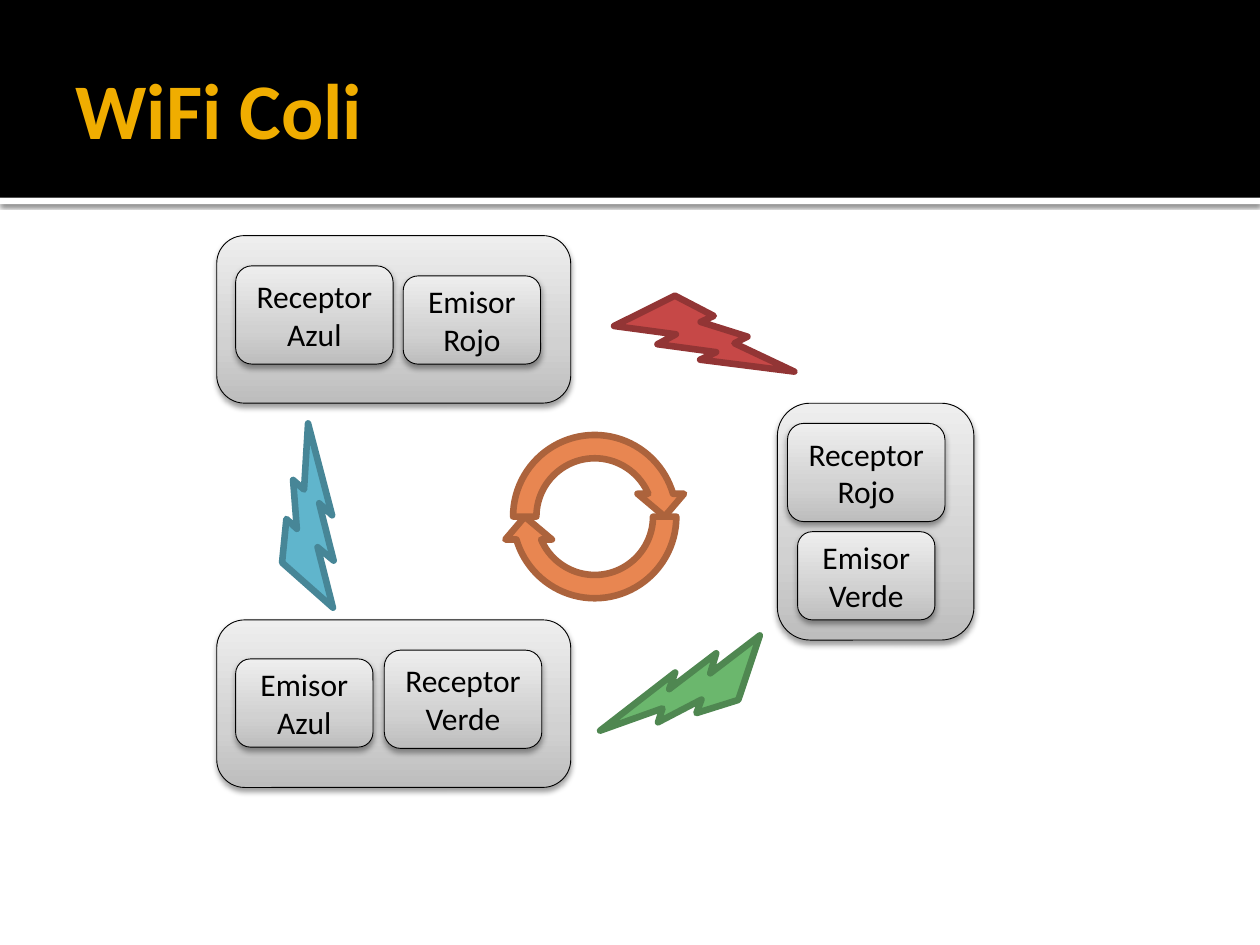
from lxml import etree
from pptx import Presentation
from pptx.dml.color import RGBColor
from pptx.enum import shapes, text
from pptx.oxml.ns import nsdecls
from pptx.util import Inches, Pt

PREFERRED = shapes.MSO_SHAPE
GRADIENT = [(0, "BDBDBD"), (35, "D1D1D1"), (100, "EEEEEE")]


def add_block(kind, box, fill, line=None, width=0.5, rotation=0):
    block = slide.shapes.add_shape(kind, *map(Inches, box))
    block.shadow.inherit = False
    block.rotation = rotation
    block.fill.solid()
    block.fill.fore_color.rgb = RGBColor.from_string(fill)
    if line:
        block.line.color.rgb = RGBColor.from_string(line)
        block.line.width = Pt(width)
    else:
        block.line.fill.background()
    return block


def add_shadow(block, alpha, blur, distance):
    effects = block.element.spPr.find("{*}effectLst")
    effects.append(etree.fromstring(
        f'<a:outerShdw {nsdecls("a")} blurRad="{Pt(blur)}" dist="{Pt(distance)}" '
        f'dir="5400000" rotWithShape="0"><a:srgbClr val="000000">'
        f'<a:alpha val="{alpha * 1000}"/></a:srgbClr></a:outerShdw>'))


prs = Presentation()
prs.slide_width, prs.slide_height = Inches(10), Inches(7.5)
slide = prs.slides.add_slide(prs.slide_layouts[5])

# Header band and the strip below it
strip = add_block(PREFERRED.RECTANGLE, (0, 1.57, 10, 0.05), "FFFFFF")
add_shadow(strip, 60, 2.5, 0.8)
add_block(PREFERRED.RECTANGLE, (0, 0, 10, 1.57), "000000")

# Title, brought in front of the band
title = slide.shapes.title
title.element.getparent().append(title.element)
title.left, title.top, title.width, title.height = map(Inches, (0.5, 0.17, 9, 1.37))
title.text = "WiFi Coli"
frame_format = {
    "vertical_anchor": text.MSO_ANCHOR.MIDDLE, "auto_size": text.MSO_AUTO_SIZE.NONE,
    "margin_left": Inches(0.1), "margin_right": Inches(0.05),
    "margin_top": Inches(0.05), "margin_bottom": Inches(0.05),
}
for attribute, value in frame_format.items():
    setattr(title.text_frame, attribute, value)
heading = title.text_frame.paragraphs[0]
heading.alignment = text.PP_ALIGN.LEFT
for attribute, value in {"name": "Calibri", "size": Pt(45), "bold": True}.items():
    setattr(heading.font, attribute, value)
heading.font.color.rgb = RGBColor.from_string("F0AD00")

# Cells, then the receptors and emitters inside them
RECEPTOR, EMITTER = (1.25, 0.78), (1.09, 0.7)
cells_and_parts = [
    ("", 6.17, 3.2, (1.56, 1.88)),
    ("", 1.72, 4.92, (2.81, 1.33)),
    ("", 1.72, 1.87, (2.81, 1.33)),
    ("Receptor Azul", 1.87, 2.11, RECEPTOR),
    ("Emisor Rojo", 3.2, 2.19, EMITTER),
    ("Emisor Azul", 1.87, 5.23, EMITTER),
    ("Receptor Verde", 3.05, 5.16, RECEPTOR),
    ("Receptor Rojo", 6.25, 3.36, RECEPTOR),
    ("Emisor Verde", 6.33, 4.22, EMITTER),
]
stops = "".join(f'<a:gs pos="{position * 1000}"><a:srgbClr val="{color}"/></a:gs>'
                for position, color in GRADIENT)
for label, left, top, size in cells_and_parts:
    part = add_block(PREFERRED.ROUNDED_RECTANGLE, (left, top, *size), "D1D1D1", "000000")
    add_shadow(part, 38, 3.5, 2)
    solid = part.element.spPr.find("{*}solidFill")
    solid.getparent().replace(solid, etree.fromstring(
        f'<a:gradFill {nsdecls("a")} rotWithShape="1"><a:gsLst>{stops}</a:gsLst>'
        '<a:lin ang="16200000" scaled="0"/></a:gradFill>'))
    if label:
        part.text_frame.text = label
        part.text_frame.word_wrap = True
        part.text_frame.vertical_anchor = text.MSO_ANCHOR.MIDDLE
        caption = part.text_frame.paragraphs[0]
        caption.alignment = text.PP_ALIGN.CENTER
        caption.font.name, caption.font.size = "Calibri", Pt(18)
        caption.font.color.rgb = RGBColor.from_string("000000")

# Cycle of two half-turn arrows
for rotation in (180, 0):
    add_block(PREFERRED.CIRCULAR_ARROW, (3.98, 3.36, 1.48, 1.48),
              "E88651", "AC633C", 3.78, rotation)

# Light signals between the cells
signals = [
    (4.91, 2.31, 348.5, "C64847", "923535"),
    (4.79, 5.07, 123.5, "6BB76D", "4F8751"),
    (1.82, 3.74, 236.6, "60B5CC", "478697"),
]
for left, top, rotation, fill, line in signals:
    add_block(PREFERRED.LIGHTNING_BOLT, (left, top, 1.33, 0.78), fill, line, 3.78, rotation)

prs.save("out.pptx")
